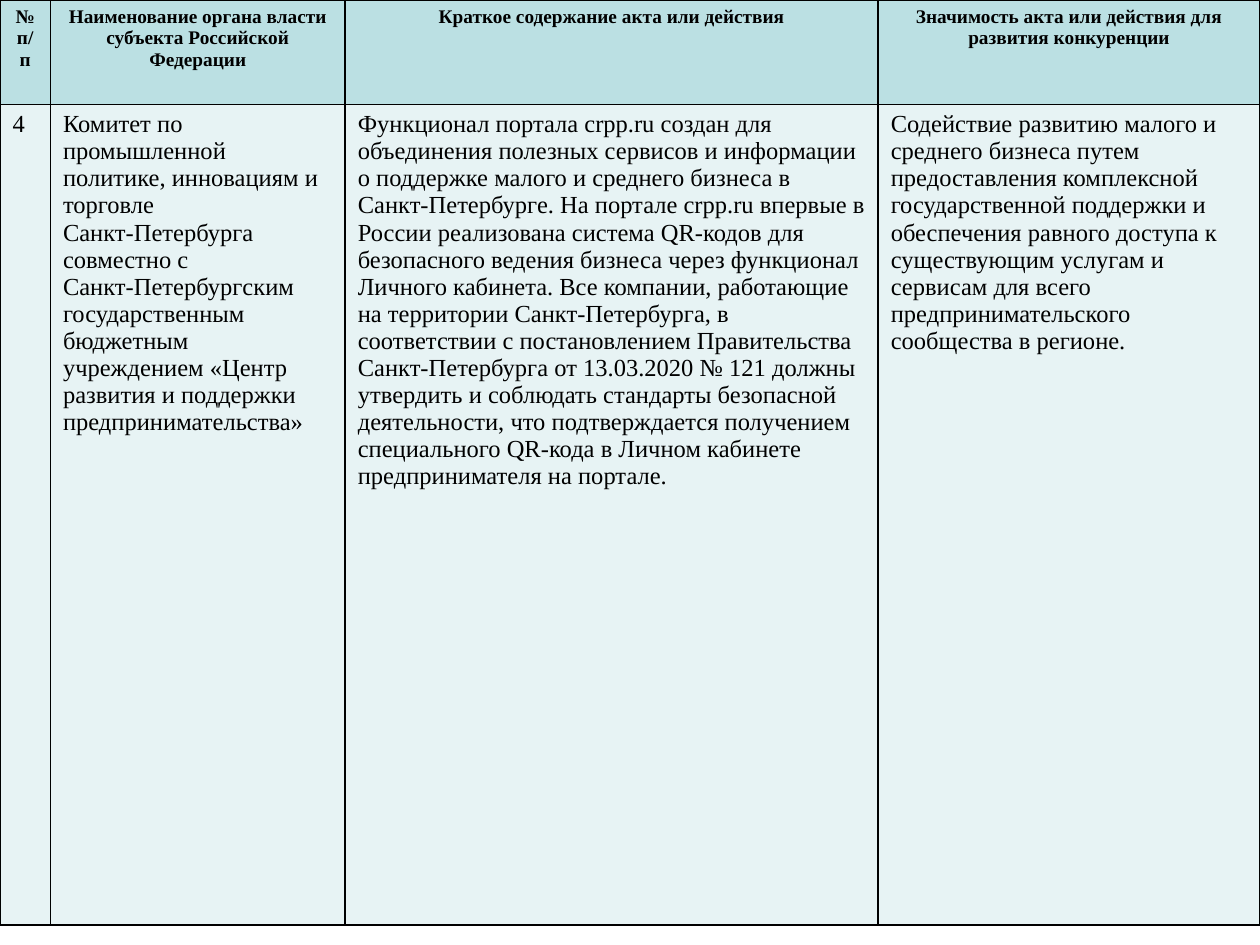
from lxml import etree
from pptx import Presentation
from pptx.dml.color import RGBColor
from pptx.enum.text import PP_ALIGN
from pptx.oxml.ns import qn
from pptx.util import Inches, Pt

CENTER, LEFT = PP_ALIGN.CENTER, PP_ALIGN.LEFT
COLORS = {"head": "BBE0E3", "body": "E7F3F4", "ink": "000000"}
FONT = "Times New Roman"
WIDTHS = [0.4, 2.34, 4.23, 3.03]
HEIGHTS = [0.83, 6.51]

HEAD = [
    "№ п/п",
    "Наименование органа власти субъекта Российской Федерации",
    "Краткое содержание акта или действия",
    "Значимость акта или действия для развития конкуренции",
]
# A newline starts a new paragraph
BODY = [
    "4",
    "Комитет по промышленной политике, инновациям и торговле\n"
    "Санкт-Петербурга совместно с\n"
    "Санкт-Петербургским государственным бюджетным учреждением "
    "«Центр развития и поддержки предпринимательства»",
    "Функционал портала crpp.ru создан для объединения полезных сервисов "
    "и информации о поддержке малого и среднего бизнеса в Санкт-Петербурге. "
    "На портале crpp.ru впервые в России реализована система QR-кодов для "
    "безопасного ведения бизнеса через функционал Личного кабинета. "
    "Все компании, работающие на территории Санкт-Петербурга, в соответствии "
    "с постановлением Правительства Санкт-Петербурга от 13.03.2020 № 121 "
    "должны утвердить и соблюдать стандарты безопасной деятельности, что "
    "подтверждается получением специального QR-кода в Личном кабинете "
    "предпринимателя на портале.",
    "Содействие развитию малого и среднего бизнеса путем предоставления "
    "комплексной государственной поддержки и обеспечения равного доступа к "
    "существующим услугам и сервисам для всего предпринимательского "
    "сообщества в регионе.",
]
# Text, fill, size, bold and alignment of each row
ROWS = [
    (HEAD, "head", 11, True, CENTER),
    (BODY, "body", 14, False, LEFT),
]


def add_borders(cell):
    """Draw a thin line on all four sides, ahead of the cell's fill."""
    props = cell._tc.get_or_add_tcPr()
    for place, side in enumerate(("lnL", "lnR", "lnT", "lnB")):
        line = etree.Element(qn(f"a:{side}"), w=str(Pt(1)))
        fill = etree.SubElement(line, qn("a:solidFill"))
        etree.SubElement(fill, qn("a:srgbClr"), val=COLORS["ink"])
        props.insert(place, line)


prs = Presentation()
prs.slide_width, prs.slide_height = Inches(10), Inches(7.5)
slide = prs.slides.add_slide(prs.slide_layouts[6])

# Table grid
table = slide.shapes.add_table(
    len(ROWS), len(WIDTHS), 0, 0, Inches(sum(WIDTHS)), Inches(sum(HEIGHTS))
).table
for col, width in zip(table.columns, WIDTHS):
    col.width = Inches(width)
for row, height in zip(table.rows, HEIGHTS):
    row.height = Inches(height)

# Cells
for row, (texts, fill, size, bold, align) in zip(table.rows, ROWS):
    for cell, text in zip(row.cells, texts):
        cell.fill.solid()
        cell.fill.fore_color.rgb = RGBColor.from_string(COLORS[fill])
        add_borders(cell)
        cell.text_frame.text = text
        for para in cell.text_frame.paragraphs:
            para.alignment = align
            font = para.font
            font.name, font.size, font.bold = FONT, Pt(size), bold
            font.color.rgb = RGBColor.from_string(COLORS["ink"])

prs.save("out.pptx")
